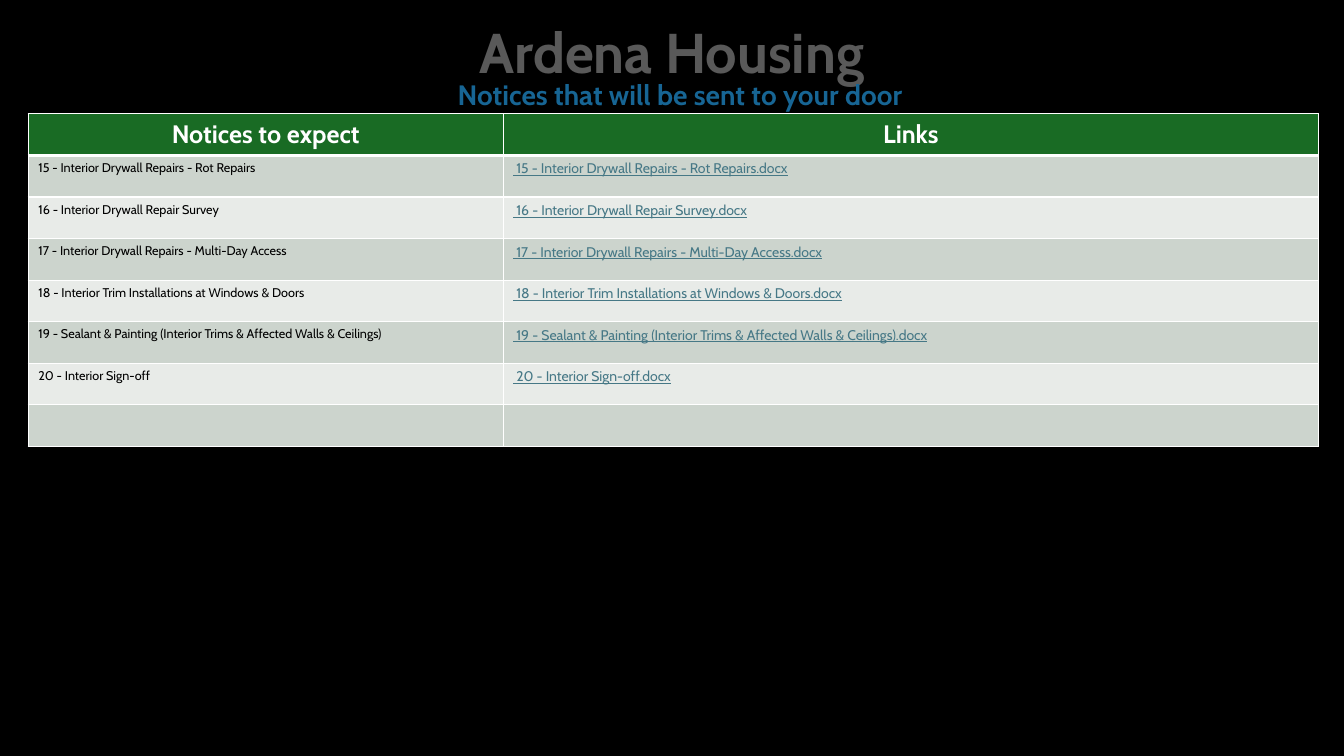
import pptx
import pptx.util
import pptx.dml.color
import pptx.enum.text
import pptx.oxml.ns
import lxml.etree

Inches = pptx.util.Inches
CENTER = pptx.enum.text.PP_ALIGN.CENTER
ANCHOR = pptx.enum.text.MSO_ANCHOR


def color(code):
    return pptx.dml.color.RGBColor.from_string(code)


def write(frame, text, size, code, bold=False, align=None):
    para = frame.paragraphs[0]
    para.text = text
    para.alignment = align
    for span in para.runs:
        span.font.name = "Cabin"
        span.font.size = pptx.util.Pt(size)
        span.font.bold = bold
        span.font.color.rgb = color(code)
    return para


deck = pptx.Presentation()
deck.slide_width, deck.slide_height = Inches(13.33), Inches(7.5)
page = deck.slides.add_slide(deck.slide_layouts[6])
page.background.fill.solid()
page.background.fill.fore_color.rgb = color("000000")

# Title and subtitle
headings = [
    ("Ardena Housing", 0.7, 0.19, 0.71, 40, "595959", ANCHOR.BOTTOM),
    ("Notices that will be sent to your door", 0.78, 0.76, 0.4, 20, "176594", ANCHOR.TOP),
]
for text, left, top, height, size, code, anchor in headings:
    box = page.shapes.add_textbox(Inches(left), Inches(top), Inches(11.93), Inches(height))
    box.text_frame.word_wrap = True
    box.text_frame.vertical_anchor = anchor
    write(box.text_frame, text, size, code, True, CENTER).line_spacing = 0.9

# Table of notices: header, one row per notice, one spare row
notices = [
    "15 - Interior Drywall Repairs - Rot Repairs",
    "16 - Interior Drywall Repair Survey",
    "17 - Interior Drywall Repairs - Multi-Day Access",
    "18 - Interior Trim Installations at Windows & Doors",
    "19 - Sealant & Painting (Interior Trims & Affected Walls & Ceilings)",
    "20 - Interior Sign-off",
]
row_count = len(notices) + 2
table = page.shapes.add_table(
    row_count, 2, Inches(0.28), Inches(1.13), Inches(12.8), Inches(3.3)
).table
table.columns[0].width, table.columns[1].width = Inches(4.71), Inches(8.09)

for column, heading in enumerate(["Notices to expect", "Links"]):
    write(table.cell(0, column).text_frame, heading, 18, "FFFFFF", True, CENTER)
for row, notice in enumerate(notices, start=1):
    write(table.cell(row, 0).text_frame, notice, 9, "000000")
    link = write(table.cell(row, 1).text_frame, f" {notice}.docx", 10, "467886")
    link.runs[0].font.underline = True

# White borders, with a thick rule below the header, and banded fills
qn = pptx.oxml.ns.qn
for row in range(row_count):
    for cell in table.rows[row].cells:
        properties = cell._tc.get_or_add_tcPr()
        for side in "LRTB":
            thick = (row, side) in [(0, "B"), (1, "T")]
            line = lxml.etree.SubElement(
                properties, qn(f"a:ln{side}"), w=str(pptx.util.Pt(3 if thick else 1))
            )
            fill = lxml.etree.SubElement(line, qn("a:solidFill"))
            lxml.etree.SubElement(fill, qn("a:srgbClr"), val="FFFFFF")
        cell.fill.solid()
        band = "CCD4CD" if row % 2 else "E8EBE8"
        cell.fill.fore_color.rgb = color(band if row else "196B24")

deck.save("out.pptx")
